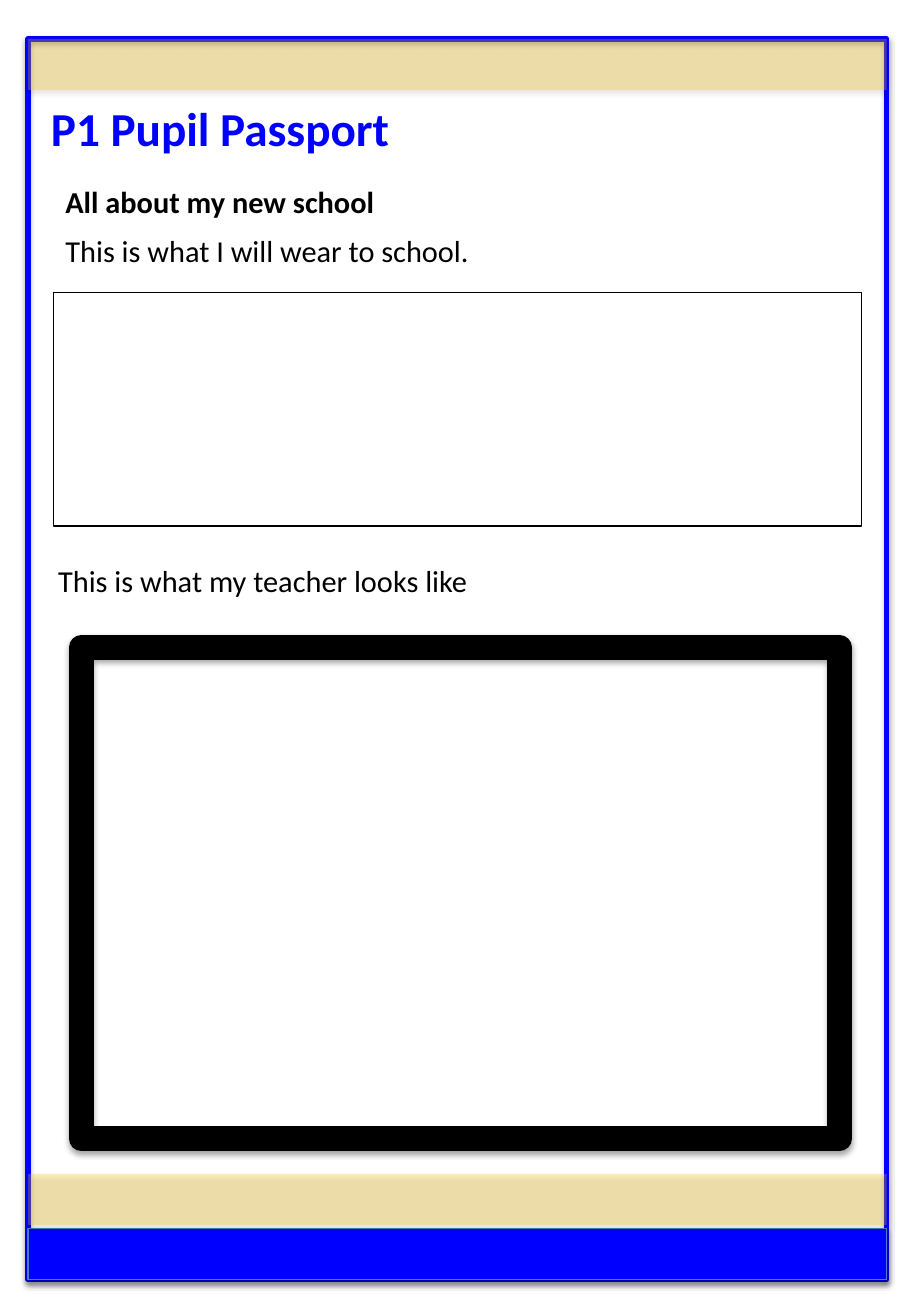
"""Build the pupil passport page."""
from lxml.etree import SubElement as Sub
from pptx import Presentation
from pptx.dml.color import RGBColor as Rgb
from pptx.enum.shapes import MSO_SHAPE as Kind
from pptx.enum.text import MSO_AUTO_SIZE as Fit
from pptx.oxml.ns import qn
from pptx.util import Inches, Pt

HUES = {"blue": "0000FF", "gold": "FEC309", "edge": "4B7EBC", "black": "000000"}
LEFT, TOP, WIDTH, BAND = 0.23, 0.32, 7.07, 0.42


def hue(name):
    return Rgb.from_string(HUES[name])


def add_shade(shape):
    list_tag = shape._element.spPr.find(qn("a:effectLst"))
    shade = Sub(list_tag, qn("a:outerShdw"), blurRad=str(Pt(3.1)),
                dist=str(Pt(1.8)), dir="5400000", rotWithShape="0")
    tint = Sub(shade, qn("a:srgbClr"), val=HUES["black"])
    Sub(tint, qn("a:alpha"), val="35000")


def add_box(slide, x, y, w, h, fill=None, alpha=None, line=None, size=0.75, shade=True):
    box = slide.shapes.add_shape(
        Kind.RECTANGLE, Inches(x), Inches(y), Inches(w), Inches(h))
    if fill:
        box.fill.solid()
        box.fill.fore_color.rgb = hue(fill)
        if alpha:
            tint = box._element.spPr.find(qn("a:solidFill"))[0]
            Sub(tint, qn("a:alpha"), val=str(alpha * 1000))
    else:
        box.fill.background()
    if line:
        box.line.color.rgb = hue(line)
        box.line.width = Pt(size)
    else:
        box.line.fill.background()
    box.shadow.inherit = False
    if shade:
        add_shade(box)


def add_text(slide, text, x, y, w, h, size=18, color="black", bold=False, inset=0.1):
    frame = slide.shapes.add_textbox(
        Inches(x), Inches(y), Inches(w), Inches(h)).text_frame
    frame.word_wrap = True
    frame.auto_size = Fit.SHAPE_TO_FIT_TEXT
    frame.margin_left = Inches(inset)
    run = frame.paragraphs[0].add_run()
    run.text = text
    font = run.font
    font.name, font.size, font.bold = "Calibri", Pt(size), bold
    font.color.rgb = hue(color)


def main():
    deck = Presentation()
    deck.slide_width, deck.slide_height = Inches(7.5), Inches(10.83)
    slide = deck.slides.add_slide(deck.slide_layouts[6])

    add_box(slide, LEFT, TOP, WIDTH, 10.21, line="blue", size=3.25)
    add_box(slide, LEFT, TOP, WIDTH, BAND, fill="gold", alpha=28)
    add_box(slide, LEFT, 10.11, WIDTH, BAND, fill="blue", line="edge")
    add_box(slide, LEFT, 9.66, WIDTH, BAND, fill="gold", alpha=28)

    add_text(slide, "P1 Pupil Passport", LEFT, 0.77, WIDTH, 0.57,
             size=28, color="blue", bold=True, inset=0.19)
    add_text(slide, "All about my new school", 0.44, 1.46, 2.84, 0.4, bold=True)
    add_box(slide, 0.44, 2.41, 6.65, 1.92, line="black", shade=False)
    add_text(slide, "This is what I will wear to school.", 0.44, 1.86, 6.86, 0.71)
    add_text(slide, "This is what my teacher looks like", 0.38, 4.58, 6.53, 0.4)
    add_box(slide, 0.67, 5.33, 6.24, 4.04, line="black", size=15)

    deck.save("out.pptx")


if __name__ == "__main__":
    main()
